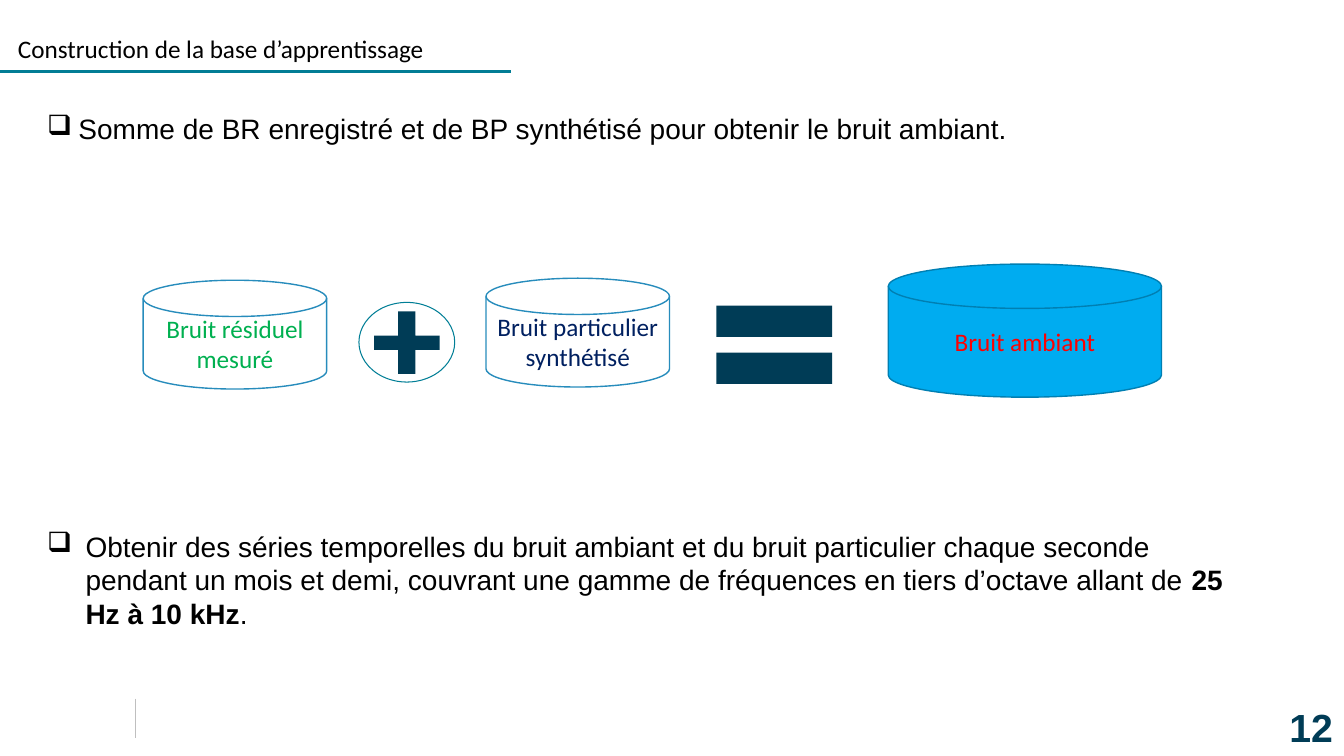
from lxml import etree
from pptx import Presentation
from pptx import util as u
from pptx.dml.color import RGBColor
from pptx.enum import shapes, text
from pptx.oxml.ns import qn

HUES = {"black": "000000", "navy": "003C56", "teal": "027D95", "ring": "007E96",
        "grey": "BFBFBF", "white": "FFFFFF", "edge": "278CBC", "sky": "00ACF0",
        "rim": "007FB2", "red": "FF0000", "blue": "002060", "green": "00B050"}

RULES = [((0, 0.71), (5.07, 0.71), "teal", 2.5),
         ((1.34, 6.93), (1.34, 7.32), "grey", 0.25)]

TITLE = {"size": 18, "name": "Calibri", "hue": "black"}
BODY = {"size": 20, "name": "Arial", "hue": "black"}
PAGE = {"size": 28, "name": "Arial", "hue": "navy", "bold": True}

NOTES = [
    ((0.08, 0.28, 10.51, 0.4), [("Construction de la base d’apprentissage", TITLE)], 0, {}),
    ((0.37, 1.06, 11.44, 0.44),
     [("Somme de BR enregistré et de BP synthétisé pour obtenir le bruit ambiant.", BODY)], 0.31, {}),
    ((0.37, 5.2, 12.14, 1.11),
     [("Obtenir des séries temporelles du bruit ambiant et du bruit particulier chaque seconde "
       "pendant un mois et demi, couvrant une gamme de fréquences en tiers d’octave allant de ", BODY),
      ("25 Hz à 10 kHz", {**BODY, "bold": True}), (".", BODY)], 0.38, {}),
    ((12.69, 6.93, 0.64, 0.57), [("12", PAGE)], 0,
     {"word_wrap": False, "vertical_anchor": text.MSO_ANCHOR.MIDDLE}),
]

KIND = shapes.MSO_SHAPE
DISK = KIND.FLOWCHART_MAGNETIC_DISK
PARTS = [
    (DISK, (8.81, 2.62, 2.71, 1.32), "sky", ("rim", 1), ("Bruit ambiant", "red")),
    (KIND.CROSS, (3.71, 3.09, 0.65, 0.62), "navy", None, None),
    (KIND.OVAL, (3.56, 3, 0.95, 0.79), None, ("ring", 0.75), None),
    (DISK, (4.82, 2.76, 1.82, 1.08), "white", ("edge", 1), ("Bruit particulier synthétisé", "blue")),
    (DISK, (1.42, 2.78, 1.82, 1.08), "white", ("edge", 1), ("Bruit résiduel mesuré", "green")),
    (KIND.MATH_EQUAL, (6.9, 2.76, 1.56, 1.32), "navy", None, None),
]


def tint(hue):
    return RGBColor.from_string(HUES[hue])


def apply(item, looks):
    for key, value in looks.items():
        setattr(item, key, value)


def write(para, runs):
    for words, looks in runs:
        run = para.add_run()
        run.text = words
        apply(run.font, {"size": u.Pt(looks["size"]), "name": looks["name"],
                         "bold": looks.get("bold", False)})
        run.font.color.rgb = tint(looks["hue"])


def mark(para, hang):
    props = para._p.get_or_add_pPr()
    props.set("marL", str(u.Inches(hang)))
    props.set("indent", str(-u.Inches(hang)))
    etree.SubElement(props, qn("a:buChar")).set("char", "❑")


def rule(slide, start, end, hue, width):
    line = slide.shapes.add_connector(shapes.MSO_CONNECTOR.STRAIGHT,
                                      *map(u.Inches, start + end))
    line.line.color.rgb = tint(hue)
    line.line.width = u.Pt(width)
    etree.SubElement(line._element.spPr, qn("a:effectLst"))


def note(slide, place, runs, hang, looks):
    frame = slide.shapes.add_textbox(*map(u.Inches, place)).text_frame
    apply(frame, {"word_wrap": True, **looks})
    para = frame.paragraphs[0]
    if hang:
        mark(para, hang)
    write(para, runs)


def part(slide, kind, place, fill, edge, label):
    shape = slide.shapes.add_shape(kind, *map(u.Inches, place))
    shape.shadow.inherit = False
    if kind == KIND.CROSS:
        shape.adjustments[0] = 0.386
    if fill:
        shape.fill.solid()
        shape.fill.fore_color.rgb = tint(fill)
    else:
        shape.fill.background()
    if edge:
        hue, width = edge
        shape.line.color.rgb = tint(hue)
        shape.line.width = u.Pt(width)
    else:
        shape.line.fill.background()
    if label:
        words, hue = label
        frame = shape.text_frame
        apply(frame, {"word_wrap": True, "vertical_anchor": text.MSO_ANCHOR.MIDDLE})
        para = frame.paragraphs[0]
        para.alignment = text.PP_ALIGN.CENTER
        write(para, [(words, {**TITLE, "hue": hue})])


def main():
    deck = Presentation()
    apply(deck, {"slide_width": u.Inches(13.33), "slide_height": u.Inches(7.5)})
    slide = deck.slides.add_slide(deck.slide_layouts[6])
    for draw, rows in ((rule, RULES), (part, PARTS), (note, NOTES)):
        for row in rows:
            draw(slide, *row)
    deck.save("out.pptx")


if __name__ == "__main__":
    main()
